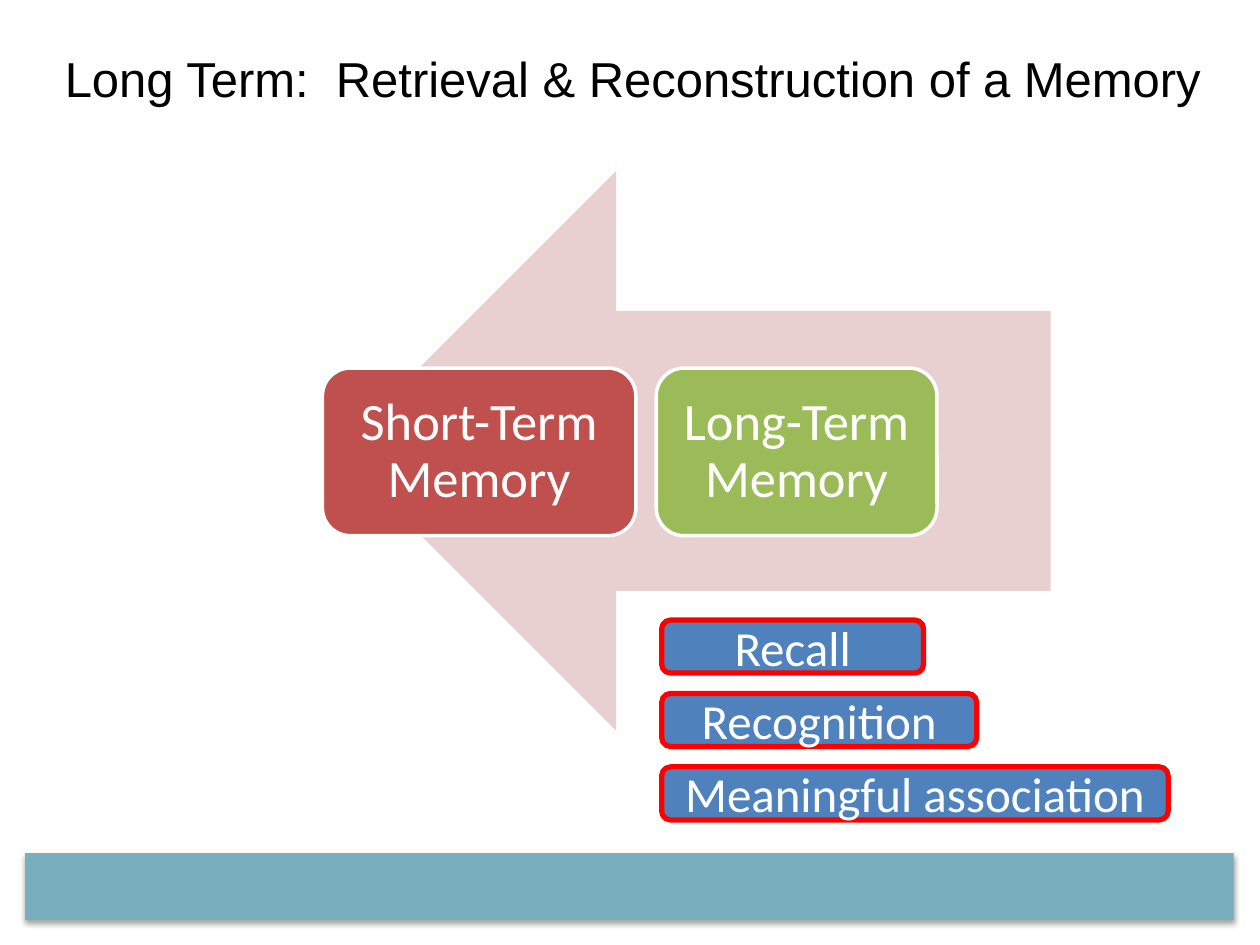
import pptx
import pptx.dml.color
import pptx.enum.shapes
import pptx.enum.text
import pptx.oxml
import pptx.util
from pptx.util import Cm

SHAPES = pptx.enum.shapes.MSO_SHAPE
STAGES = [
    ("Short-Term Memory", 6.5, 6.32, "C0504D"),
    ("Long-Term Memory", 13.23, 5.66, "9BBB59"),
]
CUES = [("Recall", 5.28), ("Recognition", 6.35), ("Meaningful association", 10.21)]
CUE_TOP = 12.5
CUE_STEP = 1.48
SHADOW = (
    '<a:effectLst xmlns:a="http://schemas.openxmlformats.org/drawingml/2006/main">'
    '<a:outerShdw blurRad="39370" dist="22860" dir="5400000" rotWithShape="0">'
    '<a:srgbClr val="000000"><a:alpha val="35000"/></a:srgbClr>'
    '</a:outerShdw></a:effectLst>'
)


def color(value):
    return pptx.dml.color.RGBColor.from_string(value)


def add_block(page, kind, left, top, width, height, fill, line=None, weight=0):
    box = page.shapes.add_shape(kind, Cm(left), Cm(top), Cm(width), Cm(height))
    box.shadow.inherit = False
    box.fill.solid()
    box.fill.fore_color.rgb = color(fill)
    if line:
        box.line.color.rgb = color(line)
        box.line.width = pptx.util.Pt(weight)
    else:
        box.line.fill.background()
    return box


def write_text(box, text, size, font, ink):
    frame = box.text_frame
    frame.word_wrap = True
    frame.auto_size = pptx.enum.text.MSO_AUTO_SIZE.NONE
    frame.vertical_anchor = pptx.enum.text.MSO_ANCHOR.MIDDLE
    para = frame.paragraphs[0]
    para.alignment = pptx.enum.text.PP_ALIGN.CENTER
    span = para.add_run()
    span.text = text
    span.font.size = pptx.util.Pt(size)
    span.font.name = font
    span.font.color.rgb = color(ink)
    return para


def add_title(page, text):
    box = page.shapes.title
    box.left, box.top, box.width, box.height = Cm(0.84), Cm(0.84), Cm(23.83), Cm(1.45)
    write_text(box, text, 28, "Arial", "000000")


def add_footer_band(page):
    band = add_block(page, SHAPES.RECTANGLE, 0.51, 17.2, 24.36, 1.35, "79AEBF")
    properties = band.element.spPr
    properties.replace(properties.find(pptx.oxml.ns.qn("a:effectLst")),
                       pptx.oxml.parse_xml(SHADOW))


def add_stage(page, text, left, width, fill):
    box = add_block(page, SHAPES.ROUNDED_RECTANGLE, left, 7.42, width, 3.38,
                    fill, "FFFFFF", 2)
    frame = box.text_frame
    frame.margin_left = frame.margin_right = Cm(0.3)
    frame.margin_top = frame.margin_bottom = Cm(0.3)
    para = write_text(box, text, 30, "Calibri", "FFFFFF")
    para.line_spacing = 0.9


def add_cue(page, text, top, width):
    box = add_block(page, SHAPES.ROUNDED_RECTANGLE, 13.34, top, width, 1.07,
                    "4F81BD", "FF0000", 3)
    write_text(box, text, 28, "Calibri", "FFFFFF")


def main():
    deck = pptx.Presentation()
    deck.slide_width, deck.slide_height = Cm(25.4), Cm(19.05)
    page = deck.slides.add_slide(deck.slide_layouts.get_by_name("Title Only"))
    add_footer_band(page)
    add_title(page, "Long Term:  Retrieval & Reconstruction of a Memory")
    add_block(page, SHAPES.LEFT_ARROW, 6.78, 3.45, 14.4, 11.28, "E8D0D0")
    for text, left, width, fill in STAGES:
        add_stage(page, text, left, width, fill)
    for row, (text, width) in enumerate(CUES):
        add_cue(page, text, CUE_TOP + row * CUE_STEP, width)
    deck.save("out.pptx")


if __name__ == "__main__":
    main()
